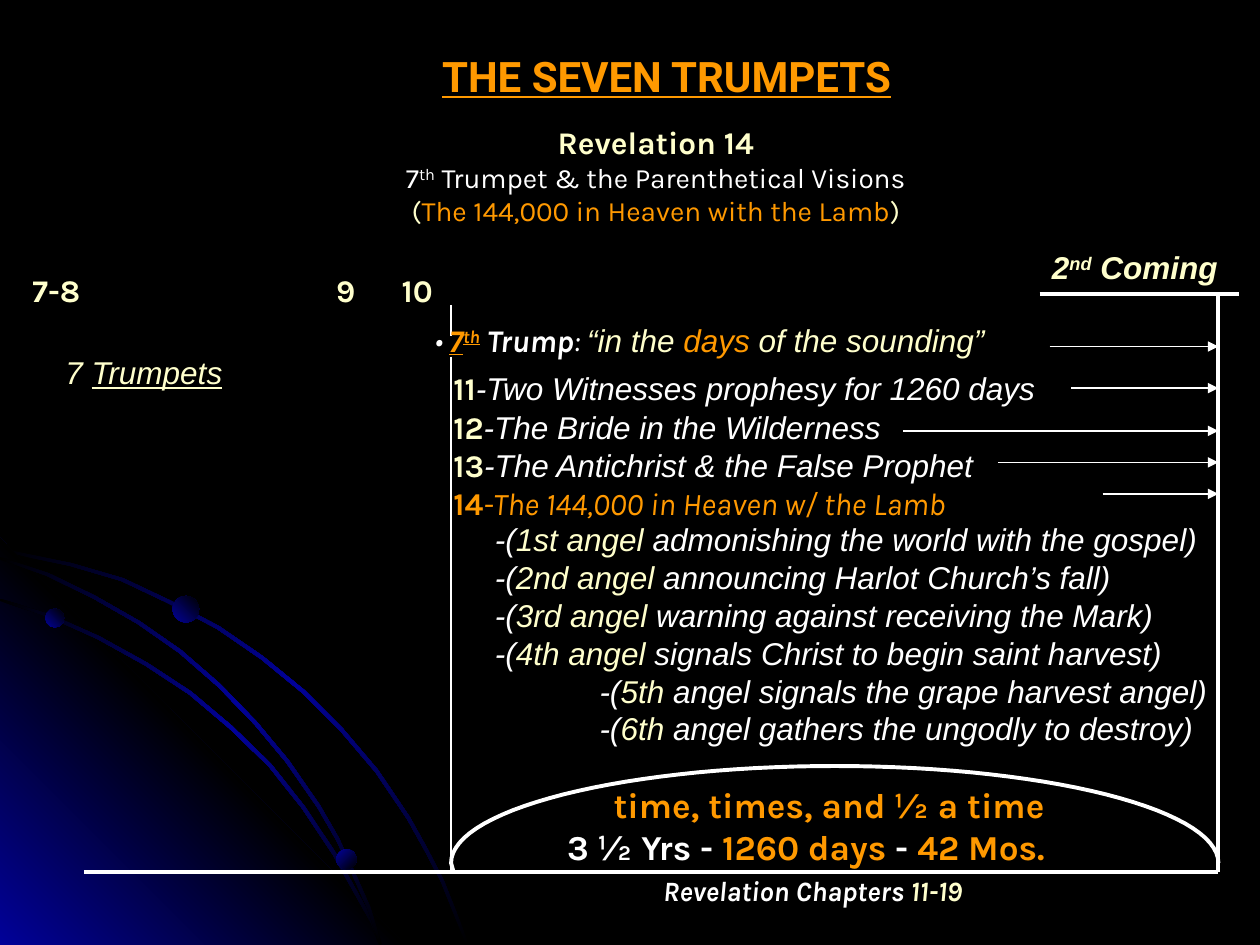
from copy import deepcopy
from dataclasses import dataclass
from math import cos, pi, sin

from lxml import etree
from pptx import Presentation
from pptx.dml.color import RGBColor
from pptx.enum.shapes import MSO_CONNECTOR, MSO_SHAPE
from pptx.enum.text import MSO_ANCHOR, PP_ALIGN
from pptx.oxml.ns import qn
from pptx.util import Inches, Pt

LEFT, CENTER, RIGHT = PP_ALIGN.LEFT, PP_ALIGN.CENTER, PP_ALIGN.RIGHT
MIDDLE = MSO_ANCHOR.MIDDLE
STRAIGHT = MSO_CONNECTOR.STRAIGHT
OVAL = MSO_SHAPE.OVAL
WHITE, CREAM, ORANGE, BLUE, BLACK = "FFFFFF", "FFFFCC", "FF9900", "010199", "000000"
WIDTH, HEIGHT = 10, 7.5
START_X, END_X, BASE_Y = 3.58, 9.67, 6.92
ARC_TOP, ARC_SIDE = 6.08, 6.85


@dataclass
class Span:
    text: str
    color: str = WHITE
    font: str = "Arial"
    size: float = 18
    bold: bool = False
    italic: bool = False
    underline: bool = False
    raised: bool = False


@dataclass
class Line:
    spans: list[Span]
    indent: float = 0


@dataclass
class TextBlock:
    left: float
    top: float
    width: float
    height: float
    lines: list[Line]
    align: PP_ALIGN = LEFT
    wrap: bool = True


def rgb(color: str) -> RGBColor:
    return RGBColor.from_string(color)


def karla(text: str, color: str = WHITE, size: float = 18, **style) -> Span:
    return Span(text, color, "Karla", size, **style)


def slanted(text: str, color: str = WHITE, **style) -> Span:
    return Span(text, color, italic=True, **style)


def add_text(page, block: TextBlock) -> None:
    box = page.shapes.add_textbox(Inches(block.left), Inches(block.top),
                                  Inches(block.width), Inches(block.height))
    frame = box.text_frame
    frame.word_wrap = block.wrap
    frame.vertical_anchor = MIDDLE
    for index, line in enumerate(block.lines):
        para = frame.add_paragraph() if index else frame.paragraphs[0]
        para.alignment = block.align
        if line.indent:
            para._p.get_or_add_pPr().set("marL", str(Inches(line.indent)))
        for span in line.spans:
            run = para.add_run()
            run.text = span.text
            font = run.font
            font.name, font.size = span.font, Pt(span.size)
            font.bold, font.italic, font.underline = span.bold, span.italic, span.underline
            font.color.rgb = rgb(span.color)
            if span.raised:
                run._r.get_or_add_rPr().set("baseline", "30000")


def add_line(page, x1: float, y1: float, x2: float, y2: float,
             weight: float, arrow: bool = False) -> None:
    line = page.shapes.add_connector(STRAIGHT, Inches(x1), Inches(y1), Inches(x2), Inches(y2))
    line.line.color.rgb = rgb(WHITE)
    line.line.width = Pt(weight)
    properties = line._element.spPr
    if arrow:
        etree.SubElement(properties.find(qn("a:ln")), qn("a:tailEnd"), type="triangle")
    etree.SubElement(properties, qn("a:effectLst"))


def add_outline(page, points: list[tuple[float, float]], close: bool):
    corners = [(Inches(x), Inches(y)) for x, y in points]
    builder = page.shapes.build_freeform(*corners[0])
    builder.add_line_segments(corners[1:], close=close)
    shape = builder.convert_to_shape()
    shape.shadow.inherit = False
    return shape


def fill_gradient(shape, colors: list[str], angle: float) -> None:
    """Spread the colours evenly; the angle runs counter-clockwise."""
    shape.line.fill.background()
    shape.fill.gradient()
    shape.fill.gradient_angle = angle
    stop_list = shape._element.spPr.find(qn("a:gradFill")).find(qn("a:gsLst"))
    for _ in colors[2:]:
        stop_list.append(deepcopy(stop_list[0]))
    for index, (stop, color) in enumerate(zip(shape.fill.gradient_stops, colors)):
        stop.color.rgb = rgb(color)
        stop.position = index / (len(colors) - 1)


def add_orbit(page, edge: list[tuple[float, float]]) -> None:
    """Thin band between an outer edge and the same edge moved inwards."""
    inner = [(max(x - 0.02, 0), min(y + 0.02, HEIGHT)) for x, y in reversed(edge)]
    fill_gradient(add_outline(page, edge + inner, True), [BLACK, BLUE, BLACK], 315)


def add_planet(page, left: float, top: float, size: float, angle: float) -> None:
    planet = page.shapes.add_shape(OVAL, Inches(left), Inches(top), Inches(size), Inches(size))
    planet.shadow.inherit = False
    fill_gradient(planet, [BLUE, BLACK], angle)


OUTER_ORBIT = [(0, 4.35), (0.28, 4.41), (0.57, 4.47), (0.98, 4.59), (1.36, 4.77),
               (1.74, 4.97), (2.09, 5.21), (2.42, 5.48), (2.72, 5.78), (3, 6.11),
               (3.25, 6.48), (3.39, 6.73), (3.52, 6.98), (3.62, 7.23), (3.72, 7.49)]
INNER_ORBIT = [(0, 4.75), (0.41, 4.88), (0.79, 5.05), (1.17, 5.26), (1.52, 5.49),
               (1.84, 5.76), (2.15, 6.06), (2.42, 6.4), (2.66, 6.76), (2.86, 7.12),
               (2.96, 7.3), (3.03, 7.49)]
MIDDLE_ORBIT = [(0, 4.42), (0.39, 4.55), (0.76, 4.73), (1.11, 4.93), (1.44, 5.16),
                (1.75, 5.43), (2.04, 5.73), (2.29, 6.03), (2.54, 6.39), (2.69, 6.65),
                (2.82, 6.93), (2.94, 7.2), (3.03, 7.49)]
PLANETS = [(0.36, 4.83, 0.15, 45), (2.67, 6.74, 0.16, 315), (1.37, 4.73, 0.21, 45)]
ARROWS = [(8.33, 2.75), (8.5, 3.08), (7.17, 3.42), (7.92, 3.67), (8.75, 3.92)]
CHAPTERS = [("7-8", 0.16), ("9", 2.57), ("10", 3.09)]
ANGELS = [
    ("1st angel", " admonishing the world with the gospel)", 0),
    ("2nd angel", " announcing Harlot Church’s fall)", 0),
    ("3rd angel", " warning against receiving the Mark)", 0),
    ("4th angel", " signals Christ to begin saint harvest)", 0),
    ("5th", " angel signals the grape harvest angel)", 0.83),
    ("6th", " angel gathers the ungodly to destroy)", 0.83),
]
BLOCKS = [
    TextBlock(3.25, 0.33, 4.08, 0.54, [
        Line([Span("THE SEVEN TRUMPETS", ORANGE, "Roboto", 24, bold=True, underline=True)]),
    ], CENTER),
    TextBlock(2.33, 0.92, 5.75, 0.94, [
        Line([karla("Revelation 14", CREAM, bold=True)]),
        Line([karla("7", size=16), karla("th", size=16, raised=True),
              karla(" Trumpet & the Parenthetical Visions", size=16)]),
        Line([karla("(", CREAM, 16), karla("The 144,000 in Heaven with the Lamb", ORANGE, 16),
              karla(")", CREAM, 16)]),
    ], CENTER),
    TextBlock(8.25, 1.92, 1.55, 0.4, [
        Line([slanted("2", CREAM, bold=True), slanted("nd", CREAM, bold=True, raised=True),
              slanted(" Coming", CREAM, bold=True)]),
    ], wrap=False),
    *(TextBlock(left, 2.1, 0.7, 0.4, [Line([karla(name, CREAM, bold=True)])])
      for name, left in CHAPTERS),
    TextBlock(3.35, 2.5, 5, 0.4, [
        Line([karla("• ", italic=True),
              karla("7", ORANGE, bold=True, italic=True, underline=True),
              karla("th", ORANGE, bold=True, italic=True, underline=True, raised=True),
              karla(" Trump", bold=True, italic=True), karla(": ", italic=True),
              slanted("“in the ", CREAM), slanted("days", ORANGE),
              slanted(" of the sounding”", CREAM)]),
    ]),
    TextBlock(3.5, 2.88, 5.2, 0.4, [
        Line([karla("11", CREAM, bold=True), slanted("-Two Witnesses prophesy for 1260 days")]),
    ]),
    TextBlock(4, 6.17, 4.39, 0.77, [
        Line([karla("time, times, and ½ a time", ORANGE, 20, bold=True)]),
        Line([karla("3 ½ Yrs - ", size=20, bold=True), karla("1260 days", ORANGE, 20, bold=True),
              karla(" - ", size=20, bold=True), karla("42 Mos.", ORANGE, 20, bold=True)]),
    ], RIGHT),
    TextBlock(0.42, 2.75, 1.58, 0.4, [
        Line([slanted("7 ", CREAM), slanted("Trumpets", CREAM, underline=True)]),
    ]),
    TextBlock(4.74, 6.88, 3.42, 0.37, [
        Line([karla("Revelation Chapters ", size=16, bold=True, italic=True),
              karla("11-19", CREAM, 16, bold=True, italic=True)]),
    ], CENTER),
    TextBlock(3.5, 3.19, 5.83, 1, [
        Line([karla("12", CREAM, bold=True), slanted("-The Bride in the Wilderness")]),
        Line([karla("13", CREAM, bold=True), slanted("-The Antichrist & the False Prophet")]),
        Line([karla("14", ORANGE, bold=True),
              karla("-The 144,000 in Heaven w/ the Lamb", ORANGE, italic=True)]),
    ]),
    TextBlock(3.83, 4.08, 5.92, 1.9, [
        Line([slanted("-("), slanted(angel, CREAM), slanted(deed)], indent)
        for angel, deed, indent in ANGELS
    ]),
]


def main() -> None:
    deck = Presentation()
    deck.slide_width, deck.slide_height = Inches(WIDTH), Inches(HEIGHT)
    page = deck.slides.add_slide(deck.slide_layouts[6])
    page.background.fill.solid()
    page.background.fill.fore_color.rgb = rgb(BLACK)

    add_orbit(page, OUTER_ORBIT)
    glow = add_outline(page, [(3.22, HEIGHT), (0, HEIGHT), (0, 4.27)], True)
    fill_gradient(glow, [BLUE, BLACK, BLUE], 45)
    for orbit in (INNER_ORBIT, MIDDLE_ORBIT):
        add_orbit(page, orbit)
    for planet in PLANETS:
        add_planet(page, *planet)

    add_line(page, 0.67, BASE_Y, END_X, BASE_Y, 2.25)
    add_line(page, END_X, 2.33, END_X, BASE_Y, 2.25)
    add_line(page, 8.25, 2.33, 9.83, 2.33, 2.25)
    add_line(page, START_X, 2.42, START_X, 2.67, 1.5)
    add_line(page, START_X, 2.83, START_X, BASE_Y, 1.5)
    for start, height in ARROWS:
        add_line(page, start, height, END_X, height, 0.75, arrow=True)

    middle, radius = (START_X + END_X) / 2, (END_X - START_X) / 2
    angles = [pi * step / 60 for step in range(61)]
    dome = [(middle - radius * cos(angle), ARC_SIDE - (ARC_SIDE - ARC_TOP) * sin(angle))
            for angle in angles]
    arc = add_outline(page, [(START_X + 0.02, BASE_Y), *dome], False)
    arc.fill.background()
    arc.line.color.rgb = rgb(WHITE)
    arc.line.width = Pt(2.25)

    for block in BLOCKS:
        add_text(page, block)
    deck.save("out.pptx")


if __name__ == "__main__":
    main()
